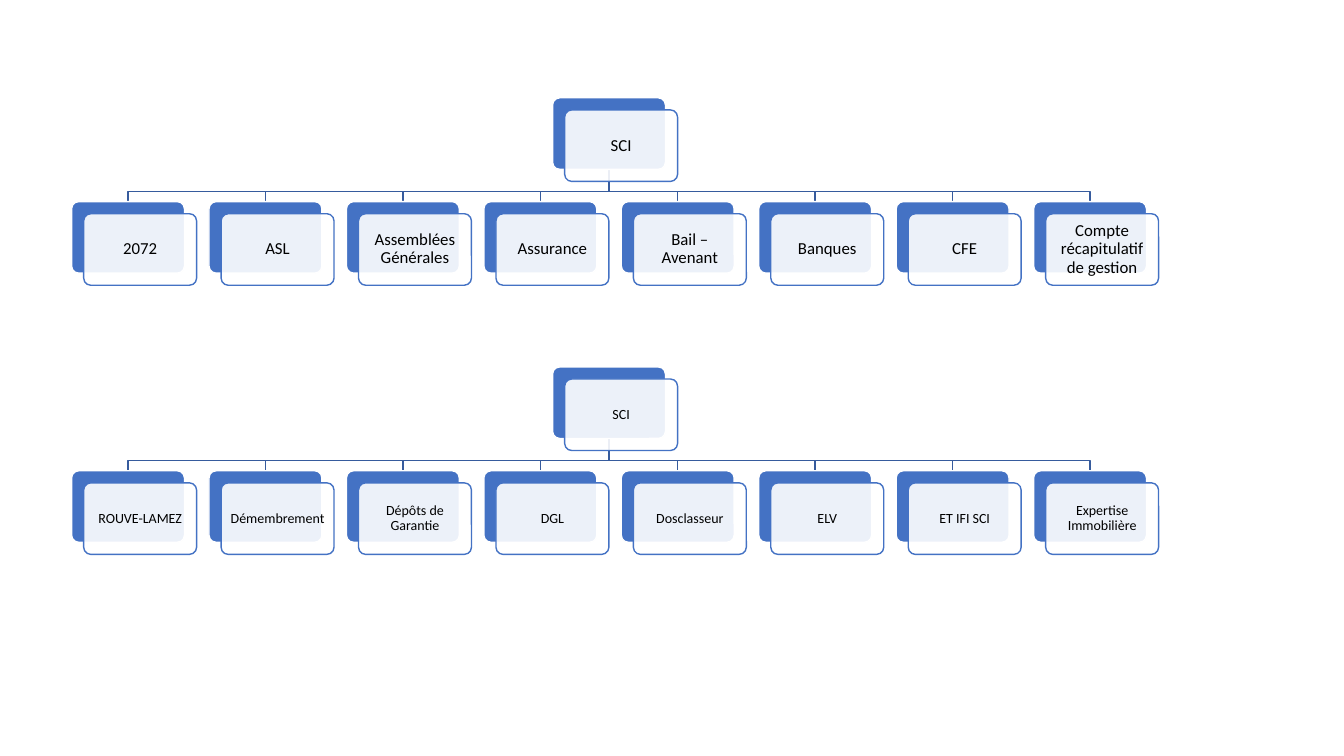
from lxml import etree
from pptx import Presentation
from pptx.dml.color import RGBColor
from pptx.enum import shapes, text
from pptx.oxml import ns
from pptx.util import Inches, Pt

COLOURS = {"blue": "4472C4", "branch": "365B9D", "white": "FFFFFF", "black": "000000"}

# Size and spacing of the cards, in inches
CARD_W, CARD_H = 1.12, 0.71
SHIFT = 0.12
FIRST_LEFT, PITCH = 0.71, 1.363
LEVEL_DROP = 1.03

# Top, text size, text inset, root and folders of each chart
CHARTS = [
    (0.97, 12, 0.07, "SCI",
     ["2072", "ASL", "Assemblées Générales", "Assurance", "Bail – Avenant",
      "Banques", "CFE", "Compte récapitulatif de gestion"]),
    (3.64, 10, 0.06, "SCI",
     ["ROUVE-LAMEZ", "Démembrement", "Dépôts de Garantie", "DGL", "Dosclasseur",
      "ELV", "ET IFI SCI", "Expertise Immobilière"]),
]


def colour(name):
    return RGBColor.from_string(COLOURS[name])


def add_panel(group, left, top, fill, outline):
    panel = group.shapes.add_shape(shapes.MSO_SHAPE.ROUNDED_RECTANGLE, Inches(left),
                                   Inches(top), Inches(CARD_W), Inches(CARD_H))
    panel.adjustments[0] = 0.1
    panel.shadow.inherit = False
    panel.fill.solid()
    panel.fill.fore_color.rgb = colour(fill)
    panel.line.color.rgb = colour(outline)
    panel.line.width = Pt(1)
    return panel


prs = Presentation()
prs.slide_width, prs.slide_height = Inches(13.33), Inches(7.5)
slide = prs.slides.add_slide(prs.slide_layouts[6])

for top, size, inset, root, folders in CHARTS:
    chart = slide.shapes.add_group_shape()
    folder_lefts = [FIRST_LEFT + i * PITCH for i in range(len(folders))]
    root_left = (folder_lefts[0] + folder_lefts[-1]) / 2
    root_x = root_left + CARD_W / 2
    folder_top = top + LEVEL_DROP

    # Branches from the root to each folder, farthest right first
    for left in reversed(folder_lefts):
        folder_x = left + CARD_W / 2
        branch = chart.shapes.build_freeform(Inches(root_x), Inches(top + CARD_H))
        bends = [(root_x, top + 0.93), (folder_x, top + 0.93), (folder_x, folder_top)]
        branch.add_line_segments([(Inches(x), Inches(y)) for x, y in bends], close=False)
        elbow = branch.convert_to_shape()
        elbow.shadow.inherit = False
        elbow.fill.background()
        elbow.line.color.rgb = colour("branch")
        elbow.line.width = Pt(1)

    # Cards: a blue backing and a translucent white front with the label
    cards = [(root, root_left, top)]
    cards += [(folder, left, folder_top) for folder, left in zip(folders, folder_lefts)]
    for label, left, card_top in cards:
        add_panel(chart, left, card_top, "blue", "white")
        front = add_panel(chart, left + SHIFT, card_top + SHIFT, "white", "blue")
        white = front.fill._xPr.find(".//" + ns.qn("a:srgbClr"))
        etree.SubElement(white, ns.qn("a:alpha"), val="90000")

        frame = front.text_frame
        frame.word_wrap = True
        frame.vertical_anchor = text.MSO_ANCHOR.MIDDLE
        frame.margin_left = frame.margin_right = Inches(inset)
        frame.margin_top = frame.margin_bottom = Inches(inset)
        paragraph = frame.paragraphs[0]
        paragraph.alignment = text.PP_ALIGN.CENTER
        paragraph.line_spacing = 0.9
        run = paragraph.add_run()
        run.text = label
        run.font.name = "Calibri"
        run.font.size = Pt(size)
        run.font.color.rgb = colour("black")

prs.save("out.pptx")
